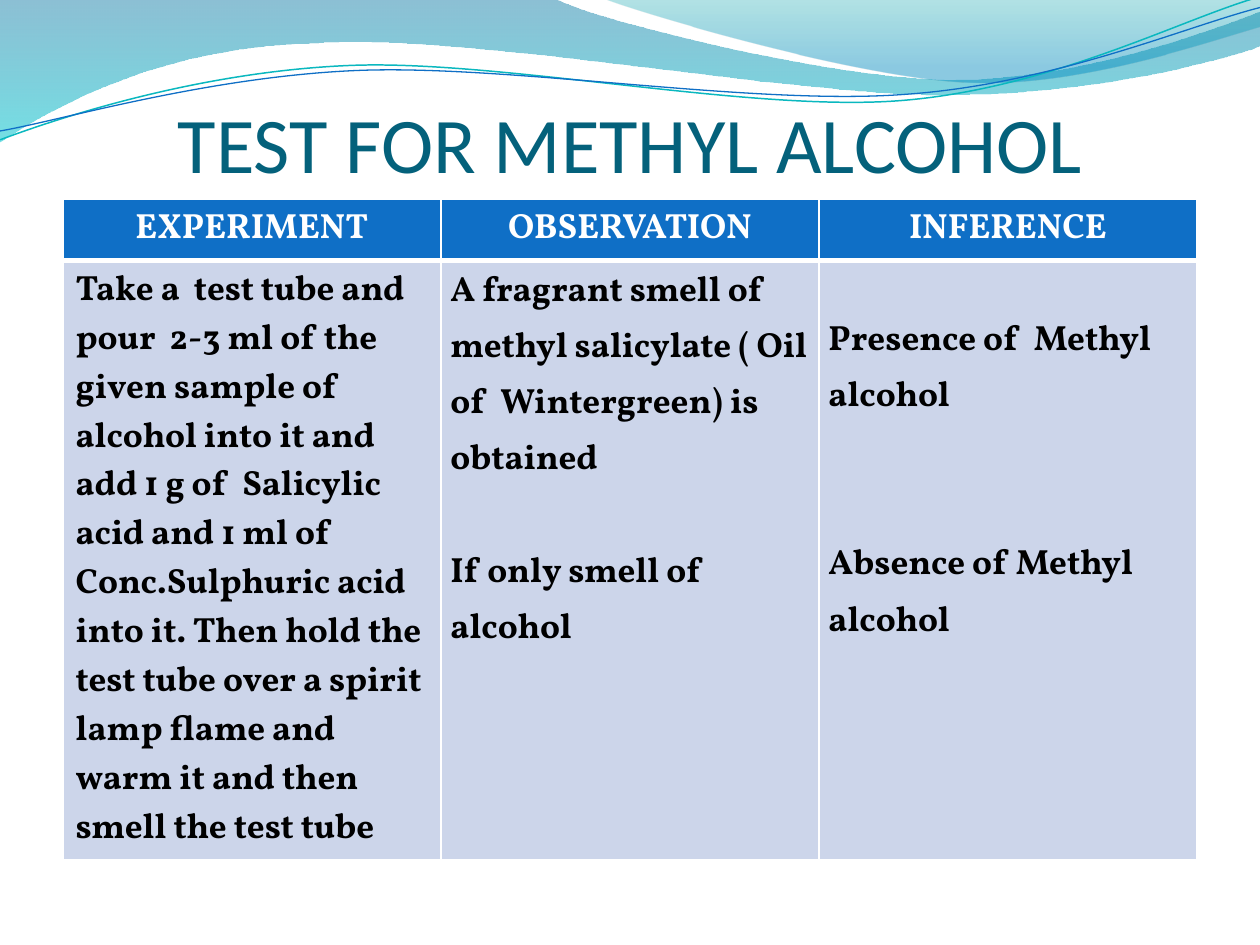
import math

from lxml import etree
from pptx import Presentation
from pptx.dml.color import RGBColor
from pptx.enum.text import MSO_ANCHOR, PP_ALIGN
from pptx.oxml.ns import qn
from pptx.util import Inches, Pt

CENTER, LEFT = PP_ALIGN.CENTER, PP_ALIGN.LEFT
BOTTOM, TOP = MSO_ANCHOR.BOTTOM, MSO_ANCHOR.TOP

COLORS = {
    "title": "04617B", "header": "0F6FC6", "body": "CCD5EA",
    "white": "FFFFFF", "black": "000000",
    "teal_line": "0AB8BF", "blue_line": "0F6FC6",
    "deep": "0074A1", "cyan": "00C6CF", "sea": "00A1A9", "sky": "008BBF",
}

BACK_WAVE = [
    (0, 0), (4.4, -0.01),
    (4.76, 0.17, 6.64, 0.63, 7.58, 0.63), (8.53, 0.63, 9.58, 0.26, 10, 0.09),
    (10.01, 0.36),
    (9.83, 0.44, 8.7, 0.76, 7.46, 0.75), (6.22, 0.75, 3.82, 0.28, 2.57, 0.34),
    (1.29, 0.36, 0.46, 0.83, -0.01, 1.13), (0, 0),
]
FRONT_WAVE = [
    (4.79, -0.01),
    (5.09, 0.11, 6.82, 0.62, 7.69, 0.65), (8.56, 0.69, 9.61, 0.32, 10, 0.21),
    (10, 0), (4.79, -0.01),
]
TEAL_CURVE = [
    (0, 1.11),
    (0.48, 0.93, 1.58, 0.57, 2.77, 0.52), (3.95, 0.47, 5.93, 0.89, 7.13, 0.8),
    (8.33, 0.71, 9.38, 0.15, 9.98, -0.02),
]
BLUE_CURVE = [
    (0, 1.04),
    (0.47, 0.96, 1.64, 0.61, 2.83, 0.56), (4.03, 0.51, 5.97, 0.84, 7.17, 0.75),
    (8.36, 0.67, 9.41, 0.21, 10, 0.06),
]
TILT = -2.7

HEADERS = ["EXPERIMENT", "OBSERVATION", "INFERENCE"]
EXPERIMENT = [
    "Take a  test tube and pour  2-3 ml of the given sample of alcohol into it "
    "and add 1 g of  Salicylic acid and 1 ml of Conc.Sulphuric acid into it. "
    "Then hold the test tube over a spirit lamp flame and warm it and then "
    "smell the test tube"
]
OBSERVATION = [
    "A fragrant smell of methyl salicylate ( Oil of  Wintergreen) is obtained",
    "If only smell of  alcohol",
]
INFERENCE = ["Presence of  Methyl alcohol", "Absence of Methyl alcohol"]


def rgb(name):
    """Return the named colour."""
    return RGBColor.from_string(COLORS[name])


def pairs(step):
    """Split a flat step into its points."""
    return list(zip(step[::2], step[1::2]))


def turn(steps, center, degrees):
    """Rotate every point of the steps about a center."""
    cos, sin = math.cos(math.radians(degrees)), math.sin(math.radians(degrees))
    cx, cy = center
    return [sum(((cx + (x - cx) * cos - (y - cy) * sin,
                  cy + (x - cx) * sin + (y - cy) * cos)
                 for x, y in pairs(step)), ()) for step in steps]


class SlideBuilder:
    """Holds the style and the current slide."""

    def __init__(self, prs):
        self.slide = prs.slides.add_slide(prs.slide_layouts[5])
        self.title_font, self.table_font = "Calibri", "Vollkorn"
        self.title_size, self.table_size = Pt(45), Pt(20)

    def title(self, text, left, top, width, height):
        s = self.slide.shapes.title
        s._element.getparent().append(s._element)
        s.left, s.top, s.width, s.height = map(Inches, (left, top, width, height))
        tf = s.text_frame
        tf.text, tf.vertical_anchor = text, BOTTOM
        tf.margin_left = tf.margin_right = tf.margin_bottom = 0
        p = tf.paragraphs[0]
        p.alignment = CENTER
        self.font(p, self.title_font, self.title_size, "title", False)

    def font(self, p, name, size, color, bold):
        p.font.name, p.font.size, p.font.bold = name, size, bold
        p.font.color.rgb = rgb(color)

    def outline(self, steps, close):
        ends = [tuple(map(Inches, step[-2:])) for step in steps]
        builder = self.slide.shapes.build_freeform(*ends[0], scale=1.0)
        builder.add_line_segments(ends[1:], close=close)
        s = builder.convert_to_shape()
        s.shadow.inherit = False
        segments = list(s._element.iter(qn("a:lnTo")))
        for step, segment in zip(steps[1:], segments):
            if len(step) == 6:
                bezier = etree.Element(qn("a:cubicBezTo"))
                for x, y in pairs(step):
                    etree.SubElement(bezier, qn("a:pt"), x=str(Inches(x) - s.left),
                                     y=str(Inches(y) - s.top))
                segment.getparent().replace(segment, bezier)
        return s

    def wave(self, steps, stops):
        s = self.outline(steps, True)
        s.line.fill.background()
        s.fill.gradient()
        s.fill.gradient_angle = 270
        for stop, (position, color, _) in zip(s.fill.gradient_stops, stops):
            stop.position, stop.color.rgb = position, rgb(color)
        for clr, (_, _, opacity) in zip(s._element.spPr.iter(qn("a:srgbClr")), stops):
            etree.SubElement(clr, qn("a:alpha"), val=str(opacity * 1000))

    def curve(self, steps, center, color, width):
        s = self.outline(turn(steps, center, -TILT), False)
        s.rotation = TILT
        s.fill.background()
        s.line.color.rgb, s.line.width = rgb(color), Pt(width)

    def table(self, left, top, col_width, height, row_heights, cols):
        frame = self.slide.shapes.add_table(
            len(row_heights), cols, Inches(left), Inches(top),
            Inches(col_width * cols), Inches(height))
        for row, row_height in zip(frame.table.rows, row_heights):
            row.height = Inches(row_height)
        frame.height = Inches(height)
        return frame.table

    def cell(self, cell, texts, fill, color, align=LEFT, spacing=None, gap=0,
             bottom=1):
        self.borders(cell, bottom)
        cell.fill.solid()
        cell.fill.fore_color.rgb = rgb(fill)
        cell.vertical_anchor = TOP
        tf = cell.text_frame
        tf.text = "\n".join(texts)
        for i, p in enumerate(tf.paragraphs):
            p.alignment = align
            self.font(p, self.table_font, self.table_size, color, True)
            if spacing:
                p.line_spacing = spacing
            if i:
                p.space_before = Pt(gap)

    def borders(self, cell, bottom):
        tc_pr = cell._tc.get_or_add_tcPr()
        for side, width in (("L", 1), ("R", 1), ("T", 1), ("B", bottom)):
            ln = etree.SubElement(tc_pr, qn(f"a:ln{side}"), w=str(Pt(width)))
            fill = etree.SubElement(ln, qn("a:solidFill"))
            etree.SubElement(fill, qn("a:srgbClr"), val=COLORS["white"])


def main():
    prs = Presentation()
    prs.slide_width, prs.slide_height = Inches(10), Inches(7.5)
    b = SlideBuilder(prs)
    b.wave(BACK_WAVE, [(0, "deep", 45), (1, "cyan", 55)])
    b.wave(FRONT_WAVE, [(0, "sea", 30), (0.8, "sky", 45)])
    b.curve(TEAL_CURVE, (4.99, 0.58), "teal_line", 0.85)
    b.curve(BLUE_CURVE, (5, 0.59), "blue_line", 0.75)
    b.title("TEST FOR METHYL ALCOHOL", 0.5, 0.77, 9, 0.73)

    table = b.table(0.5, 1.58, 3, 4.53, [0.36, 2.27], len(HEADERS))
    for i, text in enumerate(HEADERS):
        b.cell(table.cell(0, i), [text], "header", "white", CENTER, bottom=3)
    b.cell(table.cell(1, 0), EXPERIMENT, "body", "black")
    for i, texts, top, gap in ((1, OBSERVATION, 0, 32), (2, INFERENCE, 0.39, 64)):
        cell = table.cell(1, i)
        b.cell(cell, texts, "body", "black", spacing=1.15, gap=gap)
        cell.margin_left = cell.margin_right = Pt(5.4)
        cell.margin_top, cell.margin_bottom = Inches(top), 0
    prs.save("out.pptx")


if __name__ == "__main__":
    main()
